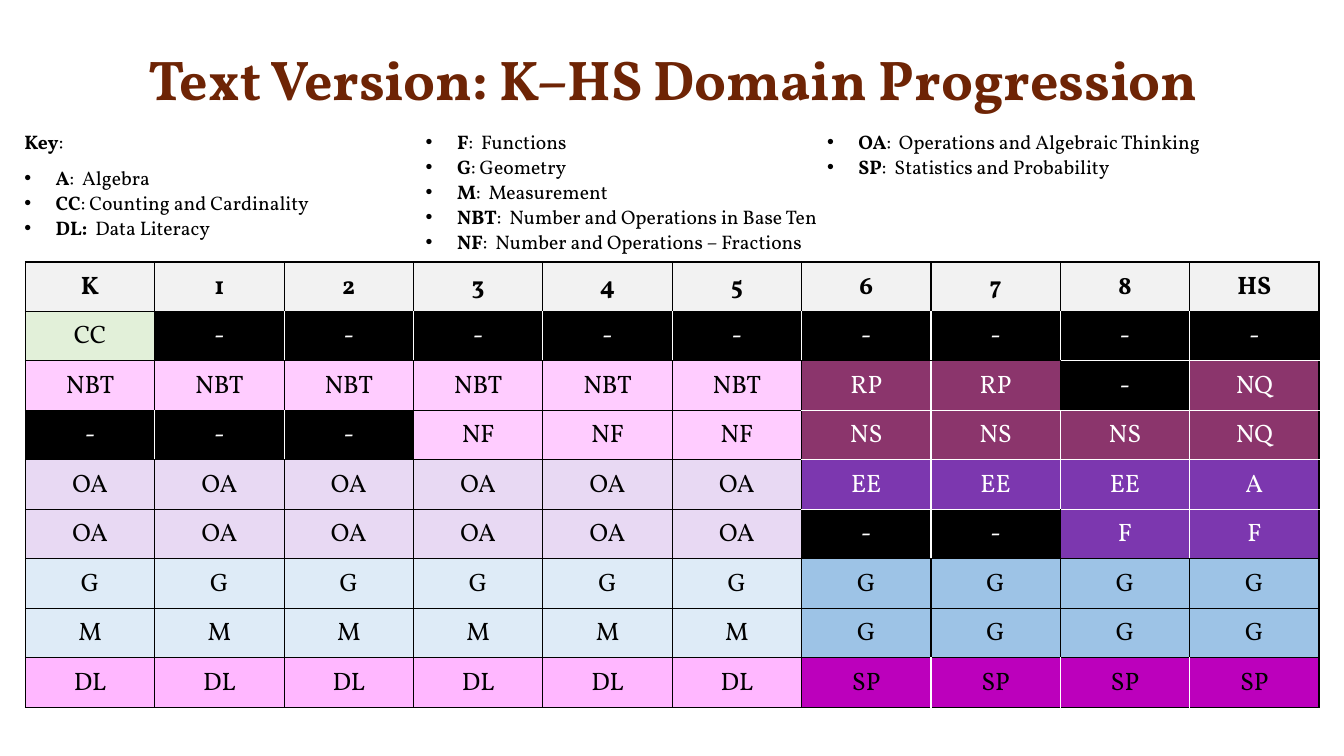
from lxml.etree import SubElement
from pptx import Presentation
from pptx.dml.color import RGBColor
from pptx.enum.text import MSO_ANCHOR as Anchor, MSO_AUTO_SIZE as AutoSize, PP_ALIGN as Align
from pptx.oxml.ns import qn
from pptx.util import Cm, Pt

BLACK, WHITE = "000000", "FFFFFF"
HEADER_FILL = "F2F2F2"
DOMAIN_FILLS = {
    "-": BLACK, "CC": "E2F0D9", "NBT": "FFCCFF", "NF": "FFCCFF",
    "RP": "8B356C", "NS": "8B356C", "NQ": "8B356C", "OA": "E8D9F3",
    "EE": "7C37AF", "A": "7C37AF", "F": "7C37AF",
    "M": "DEEBF7", "DL": "FFB7FF", "SP": "BC00BC",
}
DARK_FILLS = {BLACK, "8B356C", "7C37AF", "BC00BC"}
LOWER_GEOMETRY, UPPER_GEOMETRY = "DEEBF7", "9DC3E6"
FIRST_UPPER_COLUMN = 6
BLACK_EDGES = {((2, 7), (2, 8)), ((5, 7), (5, 8)), ((1, 6), (2, 6)), ((1, 7), (2, 7))}
SIDES = {"lnL": (0, -1), "lnR": (0, 1), "lnT": (-1, 0), "lnB": (1, 0)}

KEY = [
    ("Key", ":"),
    ("A", ":  Algebra"),
    ("CC", ": Counting and Cardinality"),
    ("DL: ", " Data Literacy"),
    ("F", ":  Functions"),
    ("G", ": Geometry"),
    ("M", ":  Measurement"),
    ("NBT", ":  Number and Operations in Base Ten"),
    ("NF", ":  Number and Operations – Fractions"),
    ("OA", ":  Operations and Algebraic Thinking"),
    ("SP", ":  Statistics and Probability"),
]
GRADES = "K 1 2 3 4 5 6 7 8 HS".split()
DOMAINS = [
    ["CC"] + ["-"] * 9,
    ["NBT"] * 6 + ["RP", "RP", "-", "NQ"],
    ["-"] * 3 + ["NF"] * 3 + ["NS"] * 3 + ["NQ"],
    ["OA"] * 6 + ["EE"] * 3 + ["A"],
    ["OA"] * 6 + ["-", "-", "F", "F"],
    ["G"] * 10,
    ["M"] * 6 + ["G"] * 4,
    ["DL"] * 6 + ["SP"] * 4,
]


def color(value):
    """Turn a hex string into a colour."""
    return RGBColor.from_string(value)


def add_text(paragraph, text, font="Vollkorn", size=18, fill=BLACK, bold=False):
    """Add a formatted run to a paragraph."""
    run = paragraph.add_run()
    run.text = text
    run.font.name = font
    run.font.size = Pt(size)
    run.font.bold = bold
    run.font.color.rgb = color(fill)


def domain_fill(domain, row, column):
    """Choose the fill of a table cell."""
    if row == 0:
        return HEADER_FILL
    if domain == "G":
        return UPPER_GEOMETRY if column >= FIRST_UPPER_COLUMN else LOWER_GEOMETRY
    return DOMAIN_FILLS[domain]


def edge_color(fills, place, neighbour):
    """Make an edge white between two dark cells, otherwise black."""
    both_dark = all(fills.get(spot) in DARK_FILLS for spot in (place, neighbour))
    kept_black = tuple(sorted((place, neighbour))) in BLACK_EDGES
    return WHITE if both_dark and not kept_black else BLACK


def add_border(cell, side, fill):
    """Draw one side of a cell."""
    line = SubElement(cell._tc.get_or_add_tcPr(), qn(f"a:{side}"), w=str(Pt(1)))
    solid = SubElement(line, qn("a:solidFill"))
    SubElement(solid, qn("a:srgbClr"), val=fill)


def set_bullet(paragraph, bulleted):
    """Give a paragraph a hanging bullet or none."""
    properties = paragraph._p.get_or_add_pPr()
    indent = Cm(0.79) if bulleted else 0
    properties.set("marL", str(indent))
    properties.set("indent", str(-indent))
    if bulleted:
        SubElement(properties, qn("a:buFont"), typeface="Arial")
        SubElement(properties, qn("a:buChar"), char="•")
    else:
        SubElement(properties, qn("a:buNone"))


class ProgressionSlide:
    """Hold the slide and its shared style."""

    line_spacing = 1.07

    def __init__(self, presentation):
        """Add a slide with a title and a body."""
        self.slide = presentation.slides.add_slide(presentation.slide_layouts[1])

    def place(self, shape, left, top, width, height):
        """Position a shape in centimetres."""
        shape.left, shape.top = Cm(left), Cm(top)
        shape.width, shape.height = Cm(width), Cm(height)

    def title(self, text, *box):
        """Fill the title placeholder."""
        shape = self.slide.shapes.title
        self.place(shape, *box)
        frame = shape.text_frame
        frame.vertical_anchor = Anchor.MIDDLE
        frame.auto_size = AutoSize.SHAPE_TO_FIT_TEXT
        paragraph = frame.paragraphs[0]
        paragraph.alignment = Align.LEFT
        paragraph.line_spacing = 0.9
        add_text(paragraph, text, size=40, fill="6E2405", bold=True)

    def key(self, entries, *box):
        """Fill the body placeholder with the key in three columns."""
        shape = self.slide.placeholders[1]
        self.place(shape, *box)
        frame = shape.text_frame
        frame.auto_size = AutoSize.NONE
        frame.margin_right = Cm(2.29)
        frame._txBody.bodyPr.set("numCol", "3")
        frame._txBody.bodyPr.set("spcCol", "0")
        last = len(entries) - 1
        for index, (code, meaning) in enumerate(entries):
            paragraph = frame.add_paragraph() if index else frame.paragraphs[0]
            set_bullet(paragraph, bulleted=index > 0)
            paragraph.line_spacing = self.line_spacing
            paragraph.space_before = Pt(0)
            paragraph.space_after = Pt(8 if index in (0, last) else 0)
            add_text(paragraph, code, size=14, bold=True)
            add_text(paragraph, meaning, size=14)

    def table(self, rows, left, top, width, height):
        """Add the table of domains by grade."""
        frame = self.slide.shapes.add_table(
            len(rows), len(rows[0]), Cm(left), Cm(top), Cm(width), Cm(height))
        frame.table.horz_banding = False
        fills = {(row, column): domain_fill(domain, row, column)
                 for row, domains in enumerate(rows)
                 for column, domain in enumerate(domains)}
        for (row, column), fill in fills.items():
            cell = frame.table.cell(row, column)
            cell.margin_left = cell.margin_right = Cm(0.18)
            cell.margin_top = cell.margin_bottom = Cm(0.15)
            for side, (down, across) in SIDES.items():
                neighbour = (row + down, column + across)
                add_border(cell, side, edge_color(fills, (row, column), neighbour))
            cell.fill.solid()
            cell.fill.fore_color.rgb = color(fill)
            domain = rows[row][column]
            paragraph = cell.text_frame.paragraphs[0]
            paragraph.alignment = Align.CENTER
            paragraph.line_spacing = self.line_spacing
            light_text = fill in DARK_FILLS and domain != "SP"
            add_text(paragraph, domain, fill=WHITE if light_text else BLACK, bold=row == 0)


def main():
    """Build and save the presentation."""
    presentation = Presentation()
    presentation.slide_width, presentation.slide_height = Cm(33.87), Cm(19.05)
    progression = ProgressionSlide(presentation)
    progression.title("Text Version: K–HS Domain Progression", 3.48, 1.04, 28.04, 2.08)
    progression.key(KEY, 0.36, 3.1, 32.89, 3.5)
    progression.table([GRADES] + DOMAINS, 0.64, 6.6, 32.6, 9.9)
    presentation.save("out.pptx")


if __name__ == "__main__":
    main()
